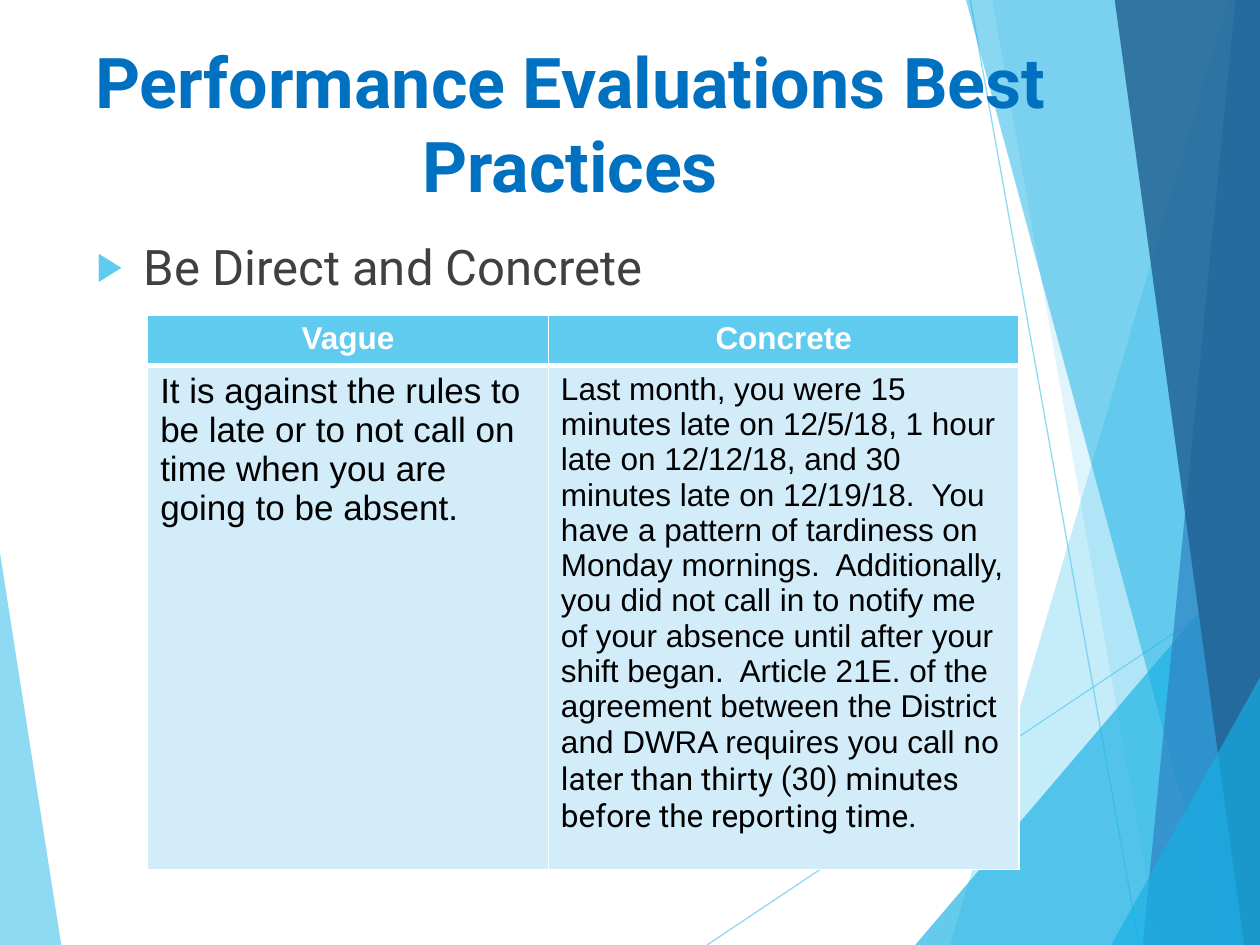
"""Build the slide on direct and concrete performance evaluations."""
from dataclasses import dataclass

from lxml import etree
from pptx import Presentation
from pptx import util as u
from pptx.dml import color
from pptx.enum import shapes, text
from pptx.oxml import ns

SKY, AQUA, BLUE, NAVY = "5FCBEF", "17B0E4", "2E83C3", "226292"
WHITE, BLACK, PALE = "FFFFFF", "000000", "D2ECF9"
WIDTH, HEIGHT = 720, 540


@dataclass(frozen=True)
class Facet:
    """A translucent polygon of the backdrop."""
    points: tuple
    fill: str
    opacity: int


@dataclass(frozen=True)
class Ray:
    """A thin line of the backdrop."""
    start: tuple
    end: tuple


@dataclass(frozen=True)
class Style:
    """The look of a piece of text."""
    size: float
    font: str
    hue: str
    bold: bool = False


@dataclass(frozen=True)
class Entry:
    """A table cell as pairs of wording and style."""
    pieces: tuple
    fill: str
    align: text.PP_ALIGN
    top: float
    bottom: float


HEADING = Style(18, "Arial", WHITE, True)
BODY = Style(18, "Arial", BLACK)
CLAUSE = Style(18, "Roboto", BLACK)
LARGE = Style(20, "Arial", BLACK)

BACKDROP = (
    Facet(((0, 316), (35.3, HEIGHT), (0, HEIGHT)), SKY, 70),
    Ray((404, HEIGHT), (WIDTH, 329)),
    Ray((554.4, 0), (651, HEIGHT)),
    Facet(((702, 0), (543, HEIGHT), (WIDTH, HEIGHT), (WIDTH, 0)), SKY, 36),
    Facet(((567.4, 0), (661.7, HEIGHT), (WIDTH, HEIGHT), (WIDTH, 0)), SKY, 20),
    Facet(((522.7, HEIGHT), (WIDTH, 309), (WIDTH, HEIGHT)), AQUA, 66),
    Facet(((552.2, 0), (698.4, HEIGHT), (WIDTH, HEIGHT), (WIDTH, 0)), AQUA, 50),
    Facet(((706.3, 0), (653, HEIGHT), (WIDTH, HEIGHT), (WIDTH, 0)), BLUE, 70),
    Facet(((637.2, 0), (711.4, HEIGHT), (WIDTH, HEIGHT), (WIDTH, 0)), NAVY, 82),
    Facet(((635, HEIGHT), (WIDTH, 387), (WIDTH, HEIGHT)), AQUA, 66),
)

VAGUE = ("It is against the rules to be late or to not call on time when you are "
         "going to be absent.")
CONCRETE = ("Last month, you were 15 minutes late on 12/5/18, 1 hour late on 12/12/18, "
            "and 30 minutes late on 12/19/18.  You have a pattern of tardiness on Monday "
            "mornings.  Additionally, you did not call in to notify me of your absence "
            "until after your shift began.  Article 21E. of the agreement between the "
            "District and DWRA requires you call ")
DEADLINE = "no later than thirty (30) minutes before the reporting time."


def rgb(code: str) -> color.RGBColor:
    """Turn a hex string into a colour."""
    return color.RGBColor.from_string(code)


def add_child(parent, tag: str, **attributes):
    """Append a DrawingML element."""
    return etree.SubElement(parent, ns.qn(tag), attributes)


def set_opacity(properties, percent: int) -> None:
    """Make every colour in the shape properties translucent."""
    for hue in properties.iter(ns.qn("a:srgbClr")):
        add_child(hue, "a:alpha", val=str(percent * 1000))


def draw_facet(slide, facet: Facet) -> None:
    """Draw a polygon of the backdrop."""
    first, *rest = facet.points
    builder = slide.shapes.build_freeform(*first, scale=u.Pt(1))
    builder.add_line_segments(rest, close=True)
    polygon = builder.convert_to_shape()
    polygon.shadow.inherit = False
    polygon.fill.solid()
    polygon.fill.fore_color.rgb = rgb(facet.fill)
    polygon.line.fill.background()
    set_opacity(polygon.element.spPr, facet.opacity)


def draw_ray(slide, ray: Ray) -> None:
    """Draw a thin line of the backdrop."""
    ends = (u.Pt(value) for value in ray.start + ray.end)
    line = slide.shapes.add_connector(shapes.MSO_CONNECTOR.STRAIGHT, *ends)
    line.line.color.rgb = rgb(SKY)
    line.line.width = u.Pt(0.75)
    set_opacity(line.element.spPr, 70)
    add_child(line.element.spPr, "a:effectLst")


def format_run(run, style: Style) -> None:
    """Apply a text style to a run."""
    run.font.size = u.Pt(style.size)
    run.font.name = style.font
    run.font.bold = style.bold
    run.font.color.rgb = rgb(style.hue)


def add_text(slide, box: tuple, wording: str, style: Style):
    """Add a wrapping one-paragraph text box and return its frame."""
    frame = slide.shapes.add_textbox(*map(u.Pt, box)).text_frame
    frame.word_wrap = True
    frame.text = wording
    format_run(frame.paragraphs[0].runs[0], style)
    return frame


def add_bullet(paragraph) -> None:
    """Give a paragraph a hanging triangle bullet."""
    paragraph.space_before = u.Pt(10)
    properties = paragraph._p.get_or_add_pPr()
    properties.set("marL", str(u.Pt(27)))
    properties.set("indent", str(u.Pt(-27)))
    add_child(add_child(properties, "a:buClr"), "a:srgbClr", val=SKY)
    add_child(properties, "a:buSzPct", val="80000")
    add_child(properties, "a:buFont", typeface="Arial")
    add_child(properties, "a:buChar", char="▶")


def fill_cell(cell, entry: Entry) -> None:
    """Write, colour and border a table cell."""
    paragraph = cell.text_frame.paragraphs[0]
    paragraph.alignment = entry.align
    for wording, style in entry.pieces:
        run = paragraph.add_run()
        run.text = wording
        format_run(run, style)
    properties = cell._tc.get_or_add_tcPr()
    widths = {"L": 1, "R": 1, "T": entry.top, "B": entry.bottom}
    for side, width in widths.items():
        border = add_child(properties, f"a:ln{side}", w=str(u.Pt(width)))
        add_child(add_child(border, "a:solidFill"), "a:srgbClr", val=WHITE)
    cell.fill.solid()
    cell.fill.fore_color.rgb = rgb(entry.fill)


def heading(wording: str) -> Entry:
    """Describe a header cell."""
    return Entry(((wording, HEADING),), SKY, text.PP_ALIGN.CENTER, 1, 3)


def example(*pieces: tuple) -> Entry:
    """Describe a body cell."""
    return Entry(pieces, PALE, text.PP_ALIGN.LEFT, 3, 1)


def add_comparison(slide) -> None:
    """Add the table of vague and concrete wording."""
    rows = ((heading("Vague"), heading("Concrete")),
            (example((VAGUE, LARGE)), example((CONCRETE, BODY), (DEADLINE, CLAUSE))))
    widths, heights = (229, 269), (28, 272)
    box = (84.4, 180, sum(widths), sum(heights))
    table = slide.shapes.add_table(len(rows), len(widths), *map(u.Pt, box)).table
    for column, width in zip(table.columns, widths):
        column.width = u.Pt(width)
    for row, height, entries in zip(table.rows, heights, rows):
        row.height = u.Pt(height)
        for cell, entry in zip(row.cells, entries):
            fill_cell(cell, entry)


def main() -> None:
    """Build and save the slide."""
    deck = Presentation()
    deck.slide_width, deck.slide_height = u.Pt(WIDTH), u.Pt(HEIGHT)
    slide = deck.slides.add_slide(deck.slide_layouts[6])
    for part in BACKDROP:
        if isinstance(part, Facet):
            draw_facet(slide, part)
        else:
            draw_ray(slide, part)
    title = add_text(slide, (46.8, 18, 558, 104), "Performance Evaluations Best Practices",
                     Style(40, "Roboto", "0070C0", True))
    title.vertical_anchor = text.MSO_ANCHOR.MIDDLE
    title.paragraphs[0].alignment = text.PP_ALIGN.CENTER
    advice = add_text(slide, (48.2, 131.8, 510, 366), "Be Direct and Concrete",
                      Style(28, "Roboto", "404040"))
    add_bullet(advice.paragraphs[0])
    add_comparison(slide)
    deck.save("out.pptx")


if __name__ == "__main__":
    main()
